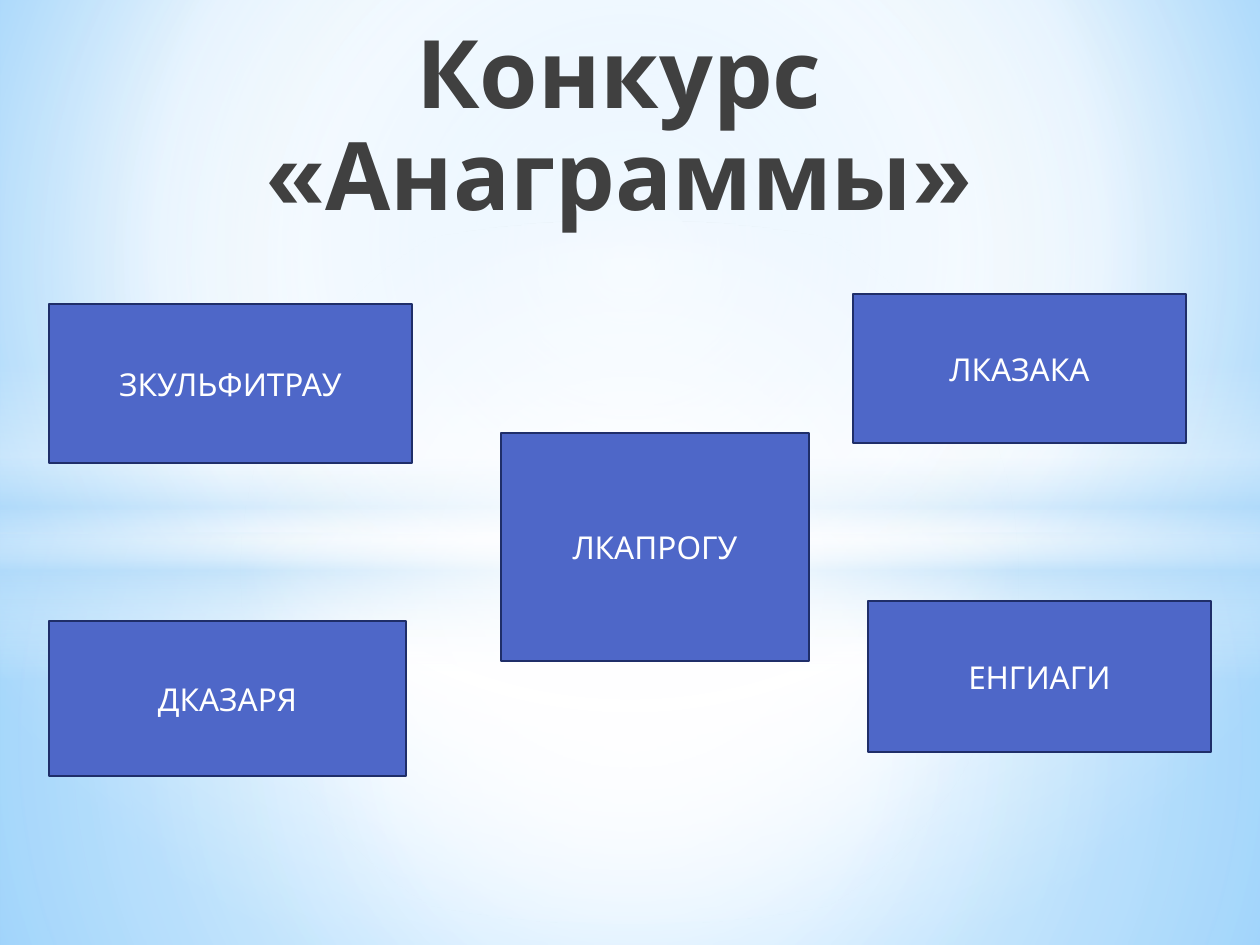
from pptx import Presentation
from pptx import util as u
from pptx.dml.color import RGBColor
from pptx.enum import shapes, text
from pptx.oxml import parse_xml
from pptx.oxml.ns import nsdecls, qn

PX = 914400 / 126
BLUE = RGBColor(0x4E, 0x67, 0xC8)
NAVY = RGBColor(0x1F, 0x2E, 0x69)
WHITE = RGBColor(0xFF, 0xFF, 0xFF)
GRAY = RGBColor(0x40, 0x40, 0x40)
ICE = RGBColor(0xB4, 0xDC, 0xFA)
SKY = RGBColor(0x9E, 0xD5, 0xFF)
AZURE = RGBColor(0x5B, 0xB9, 0xFF)
RECT = shapes.MSO_SHAPE.RECTANGLE
OVAL = shapes.MSO_SHAPE.OVAL
CENTER = (50, 50, 50, 50)


def place(item, *bounds):
    for name, px in zip(("left", "top", "width", "height"), bounds):
        setattr(item, name, u.Emu(round(px * PX)))


def set_gradient(target, stops, focus=None):
    """Use (position, colour, opacity) stops: circular around focus, else downward."""
    target.fill.solid() if hasattr(target, "fill") else target.background.fill.solid()
    marks = "".join(
        f'<a:gs pos="{pos * 1000}"><a:srgbClr val="{color}">'
        f'<a:alpha val="{opacity * 1000}"/></a:srgbClr></a:gs>'
        for pos, color, opacity in stops)
    shade = '<a:lin ang="5400000" scaled="0"/>'
    if focus:
        edges = " ".join(f'{side}="{pct * 1000}"' for side, pct in zip("ltrb", focus))
        shade = f'<a:path path="circle"><a:fillToRect {edges}/></a:path>'
    solid = target.element.find(".//" + qn("a:solidFill"))
    solid.getparent().replace(solid, parse_xml(
        f'<a:gradFill {nsdecls("a")}><a:gsLst>{marks}</a:gsLst>{shade}</a:gradFill>'))


deck = Presentation()
deck.slide_width, deck.slide_height = u.Inches(10), u.Inches(7.5)
page = deck.slides.add_slide(deck.slide_layouts[5])
set_gradient(page, [(0, SKY, 100), (60, WHITE, 100), (100, AZURE, 100)], (20, 10, 20, 60))

# Soft light layers behind the content
glows = [
    (RECT, (0, 533, 1260, 412), [(0, WHITE, 91), (37, WHITE, 76), (100, ICE, 79)], CENTER),
    (RECT, (0, 0, 1260, 533), [(0, WHITE, 89), (48, WHITE, 62), (100, ICE, 79)], CENTER),
    (RECT, (0, 365, 1260, 315), [(0, WHITE, 0), (29, WHITE, 30), (45, ICE, 40),
                                 (55, WHITE, 26), (65, ICE, 60), (100, WHITE, 0)], None),
    (OVAL, (0, 221, 1260, 703), [(0, WHITE, 100), (54, WHITE, 0)], CENTER),
]
for kind, bounds, stops, focus in glows:
    glow = page.shapes.add_shape(kind, 0, 0, 0, 0)
    place(glow, *bounds)
    glow.shadow.inherit = False
    set_gradient(glow, stops, focus)
    glow.line.fill.background()

title = page.shapes.title
title.element.getparent().append(title.element)
place(title, 112, 16, 989, 277)
frame = title.text_frame
frame.text = "Конкурс «Анаграммы»"
frame_format = {"word_wrap": True, "auto_size": text.MSO_AUTO_SIZE.NONE,
                "vertical_anchor": text.MSO_ANCHOR.TOP,
                "margin_top": u.Emu(round(11 * PX))}
for name, value in frame_format.items():
    setattr(frame, name, value)
para = frame.paragraphs[0]
para.alignment = text.PP_ALIGN.CENTER
para.line_spacing = 0.9
props = para._p.get_or_add_pPr()
props.set("marL", str(u.Inches(0.2)))
props.set("indent", "0")
span = para.runs[0]
for name, value in {"name": "Cabin", "size": u.Pt(54), "bold": True}.items():
    setattr(span.font, name, value)
span.font.color.rgb = GRAY

anagrams = [
    ("ЗКУЛЬФИТРАУ", 49, 304, 363, 159),
    ("ДКАЗАРЯ", 49, 621, 357, 155),
    ("ЛКАЗАКА", 853, 294, 333, 149),
    ("ЕНГИАГИ", 868, 601, 343, 151),
    ("ЛКАПРОГУ", 501, 433, 308, 228),
]
for word, *bounds in anagrams:
    box = page.shapes.add_shape(RECT, 0, 0, 0, 0)
    place(box, *bounds)
    box.shadow.inherit = False
    box.fill.solid()
    box.fill.fore_color.rgb = BLUE
    box.line.color.rgb = NAVY
    box.line.width = u.Pt(1.25)
    box.text_frame.text = word
    box.text_frame.word_wrap = True
    box.text_frame.vertical_anchor = text.MSO_ANCHOR.MIDDLE
    para = box.text_frame.paragraphs[0]
    para.alignment = text.PP_ALIGN.CENTER
    span = para.runs[0]
    for name, value in {"name": "Cabin", "size": u.Pt(18)}.items():
        setattr(span.font, name, value)
    span.font.color.rgb = WHITE

deck.save("out.pptx")
